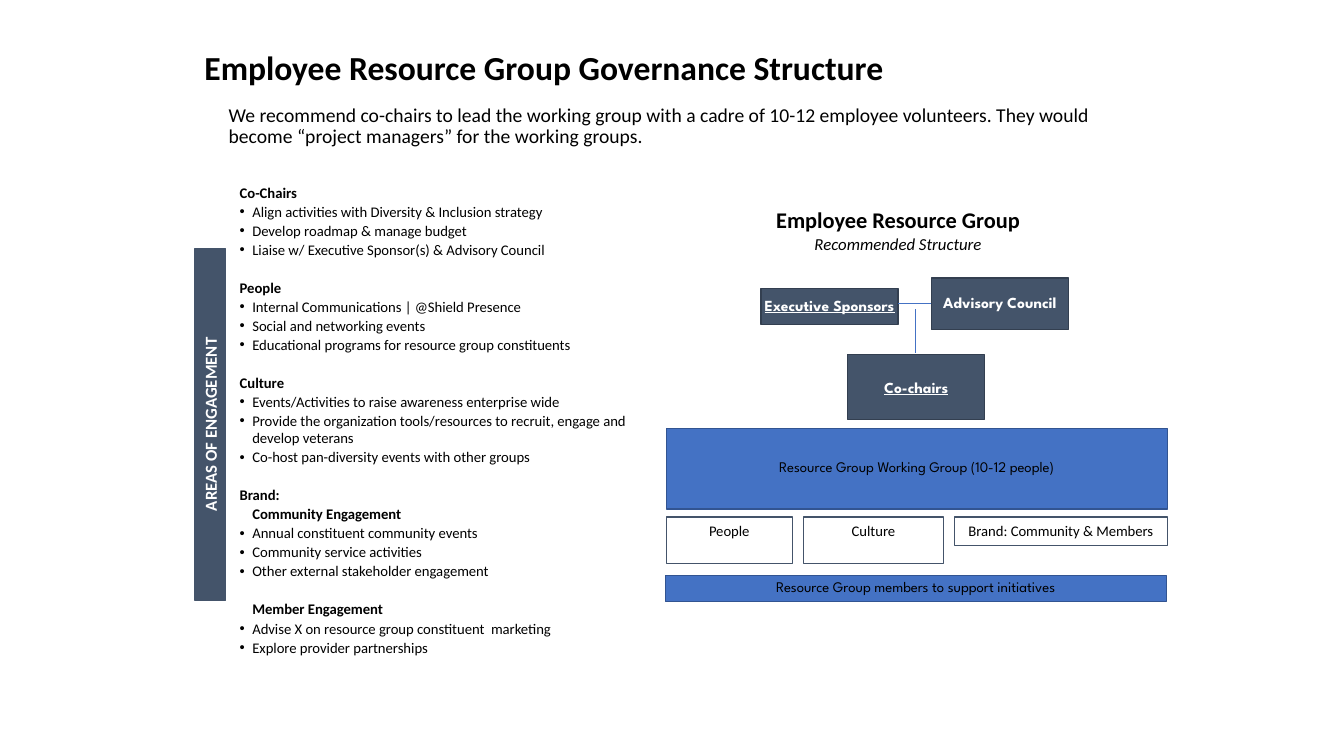
from dataclasses import dataclass

from lxml import etree
from pptx import Presentation, util as u
from pptx.dml.color import RGBColor
from pptx.enum import shapes as sh, text as tx
from pptx.oxml.ns import qn

CELL = u.Inches(0.1)
SANS, SPARTAN = "Calibri", "League Spartan"
BLACK, WHITE, SLATE, NAVY = "000000", "FFFFFF", "44546A", "333F50"
BLUE, EDGE = "4472C4", "325491"
MID, TOP = tx.MSO_ANCHOR.MIDDLE, tx.MSO_ANCHOR.TOP


@dataclass
class Look:
    """Fill, line and lettering shared by boxes of one kind."""
    fill: str
    line: str
    ink: str
    font: str
    size: float
    bold: bool = False
    anchor: tx.MSO_ANCHOR = MID
    inset: float | None = None
    lead: float = 1.0


@dataclass
class Box:
    """A labelled rectangle placed by column and row."""
    label: str
    col: float
    row: float
    cols: float
    rows: float
    look: Look
    under: bool = False
    turn: int = 0


@dataclass
class Part:
    """A heading with its bulleted items."""
    head: str
    items: list[str]
    sub: bool = False
    gap: bool = True


BAND = Look(BLUE, EDGE, BLACK, SPARTAN, 10.5, lead=0.8)
CARD = Look(WHITE, SLATE, BLACK, SANS, 10.5, anchor=TOP)
SIDE = Look(SLATE, SLATE, WHITE, SANS, 12, True, TOP)
ROLE = Look(SLATE, NAVY, WHITE, SPARTAN, 11, True, inset=0.1, lead=0.9)
CHAIR = Look(SLATE, NAVY, WHITE, SPARTAN, 11, True, inset=0.1)

BOXES = [
    Box("Resource Group members to support initiatives", 66, 57.1, 49.7, 2.6, BAND),
    Box("AREAS OF ENGAGEMENT", 3.4, 40.6, 34.9, 3, SIDE, turn=270),
    Box("Resource Group Working Group (10-12 people)", 66.1, 42.5, 49.7, 8, BAND),
    Box("People", 66.1, 51.3, 12.5, 4.6, CARD),
    Box("Culture", 79.7, 51.3, 13.9, 4.6, CARD),
    Box("Brand: Community & Members", 94.7, 51.3, 21.1, 2.8, CARD),
    Box("Co-chairs", 84.1, 35.2, 13.6, 6.4, CHAIR, under=True),
    Box("Executive Sponsors", 75.5, 28.6, 13.6, 3.6, ROLE, under=True),
    Box("Advisory Council", 92.4, 27.6, 13.6, 5.1, ROLE),
]
LINKS = [(90.8, 30.7, 90.8, 35), (89.1, 30.1, 92.4, 30.1)]

PARTS = [
    Part("Co-Chairs", [
        "Align activities with Diversity & Inclusion strategy",
        "Develop roadmap & manage budget",
        "Liaise w/ Executive Sponsor(s) & Advisory Council"], gap=False),
    Part("People", [
        "Internal Communications | @Shield Presence",
        "Social and networking events",
        "Educational programs for resource group constituents"]),
    Part("Culture", [
        "Events/Activities to raise awareness enterprise wide",
        "Provide the organization tools/resources to recruit, engage and develop veterans",
        "Co-host pan-diversity events with other groups"]),
    Part("Brand:", []),
    Part("Community Engagement", [
        "Annual constituent community events",
        "Community service activities",
        "Other external stakeholder engagement"], sub=True, gap=False),
    Part("Member Engagement", [
        "Advise X on resource group constituent  marketing",
        "Explore provider partnerships"], sub=True),
]


def grid(*cells: float) -> list[int]:
    """Turn grid cells into lengths."""
    return [round(n * CELL) for n in cells]


def tint(code: str) -> RGBColor:
    """Turn a hex string into a colour."""
    return RGBColor.from_string(code)


def style(para, font: str, size: float, ink: str = BLACK, bold: bool = False) -> None:
    """Set the lettering of a paragraph."""
    para.font.name, para.font.size, para.font.bold = font, u.Pt(size), bold
    para.font.color.rgb = tint(ink)


def frame(slide, *cells: float):
    """Add a wrapping text box and return its text frame."""
    body = slide.shapes.add_textbox(*grid(*cells)).text_frame
    body.word_wrap = True
    return body


def dent(para, left: float, hang: float = 0, mark: str = "") -> None:
    """Indent a paragraph and give it a bullet if asked."""
    props = para._p.get_or_add_pPr()
    props.set("marL", str(round(left * CELL)))
    props.set("indent", str(round(-hang * CELL)))
    if mark:
        etree.SubElement(props, qn("a:buFont")).set("typeface", "Arial")
        etree.SubElement(props, qn("a:buChar")).set("char", mark)


def draw_box(slide, box: Box) -> None:
    """Draw one labelled rectangle."""
    look = box.look
    rect = slide.shapes.add_shape(
        sh.MSO_SHAPE.RECTANGLE, *grid(box.col, box.row, box.cols, box.rows))
    rect.shadow.inherit = False
    rect.rotation = box.turn
    rect.fill.solid()
    rect.fill.fore_color.rgb = tint(look.fill)
    rect.line.color.rgb = tint(look.line)
    rect.line.width = u.Pt(1)
    body = rect.text_frame
    body.word_wrap, body.vertical_anchor = True, look.anchor
    if look.inset is not None:
        pad = grid(look.inset)[0]
        body.margin_left = body.margin_right = pad
        body.margin_top = body.margin_bottom = pad
    para = body.paragraphs[0]
    para.text, para.alignment = box.label, tx.PP_ALIGN.CENTER
    para.line_spacing = look.lead
    style(para, look.font, look.size, look.ink, look.bold)
    para.font.underline = box.under


def draw_link(slide, ends: tuple[float, ...]) -> None:
    """Draw one straight line between boxes."""
    link = slide.shapes.add_connector(sh.MSO_CONNECTOR.STRAIGHT, *grid(*ends))
    link.line.color.rgb = tint(BLUE)
    link.line.width = u.Pt(1)
    etree.SubElement(link._element.spPr, qn("a:effectLst"))


def draw_parts(slide, parts: list[Part]) -> None:
    """Write the headed lists of engagement areas."""
    body = frame(slide, 22.8, 17.7, 43.3, 48.4)
    rows = [(part, line, line is None)
            for part in parts for line in [None, *part.items]]
    for spot, (part, line, head) in enumerate(rows):
        para = body.add_paragraph() if spot else body.paragraphs[0]
        para.text = part.head if head else line
        para.space_before = u.Pt(14.6 if head and part.gap else 1)
        style(para, SANS, 10.5, bold=head)
        if not head:
            dent(para, 1.25, 1.25, "•")
        elif part.sub:
            dent(para, 1.25)


def draw_heads(slide) -> None:
    """Write the title, the lead text and the chart heading."""
    body = frame(slide, 19.3, 3.4, 90, 7.1)
    body.vertical_anchor = MID
    title = body.paragraphs[0]
    title.text, title.line_spacing = "Employee Resource Group Governance Structure", 0.9
    style(title, SANS, 24, bold=True)
    lead = frame(slide, 21.7, 10, 90, 9).paragraphs[0]
    lead.text = ("We recommend co-chairs to lead the working group with a cadre of 10-12 "
                 "employee volunteers. They would become “project managers” for the "
                 "working groups.")
    lead.line_spacing = 0.9
    style(lead, SANS, 14)
    body = frame(slide, 70.4, 20, 37.4, 5.7)
    name, note = body.paragraphs[0], body.add_paragraph()
    name.text, note.text = "Employee Resource Group", "Recommended Structure"
    name.alignment = note.alignment = tx.PP_ALIGN.CENTER
    style(name, SANS, 16, bold=True)
    style(note, SANS, 12)
    note.font.italic = True


def main() -> None:
    """Build and save the slide."""
    deck = Presentation()
    deck.slide_width, deck.slide_height = grid(133.33, 75)
    slide = deck.slides.add_slide(deck.slide_layouts[6])
    draw_heads(slide)
    draw_parts(slide, PARTS)
    for box in BOXES:
        draw_box(slide, box)
    for ends in LINKS:
        draw_link(slide, ends)
    deck.save("out.pptx")


if __name__ == "__main__":
    main()
